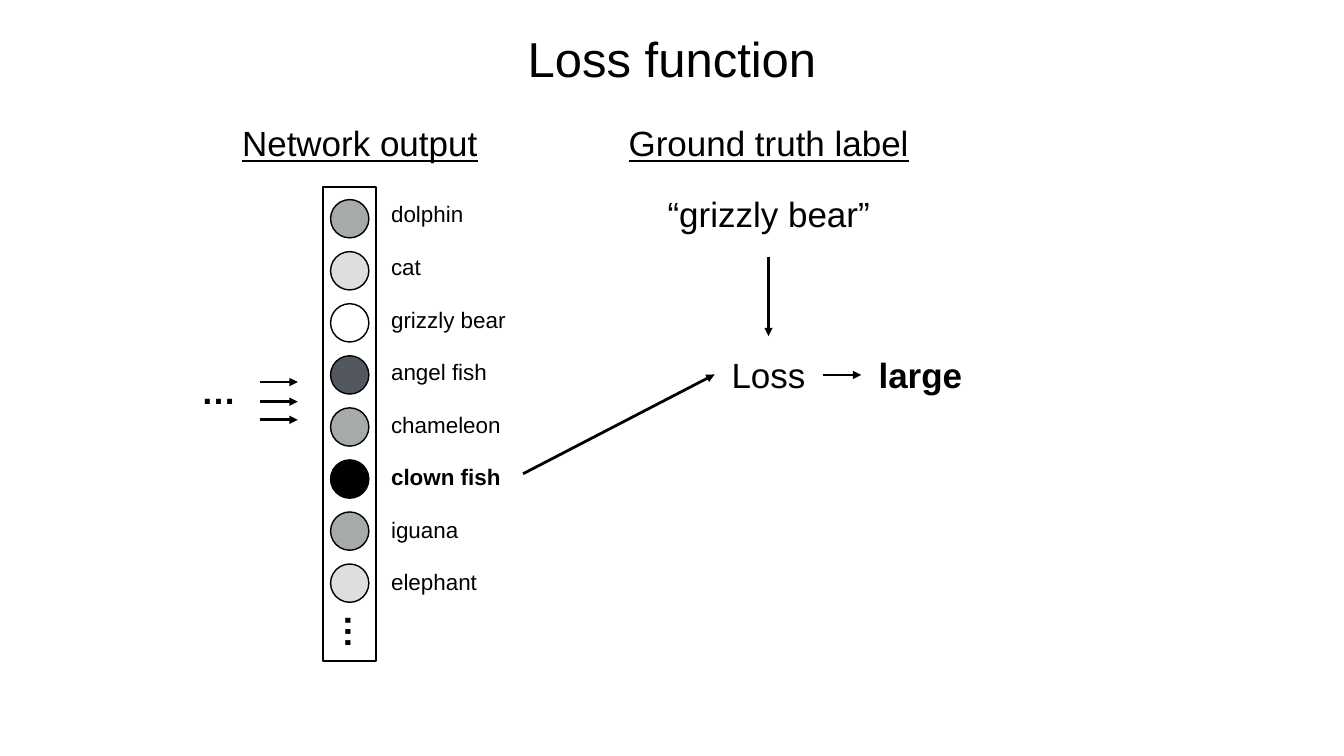
"""Build the "Loss function" slide: network output compared with a ground truth label."""
import pptx
import pptx.dml.color
import pptx.enum.shapes
import pptx.enum.text
import pptx.oxml
import pptx.oxml.ns
import pptx.util

BLACK = pptx.dml.color.RGBColor(0x00, 0x00, 0x00)
SLATE = pptx.dml.color.RGBColor(0x53, 0x58, 0x5F)
GRAY = pptx.dml.color.RGBColor(0xA6, 0xAA, 0xA9)
PALE = pptx.dml.color.RGBColor(0xDC, 0xDE, 0xE0)
WHITE = pptx.dml.color.RGBColor(0xFF, 0xFF, 0xFF)

COLUMNS, ROWS = 26.67, 15
CELL = pptx.util.Inches(1)

CLASSES = [
    ("dolphin", GRAY, {}),
    ("cat", PALE, {}),
    ("grizzly bear", WHITE, {}),
    ("angel fish", SLATE, {}),
    ("chameleon", GRAY, {}),
    ("clown fish", BLACK, {"bold": True}),
    ("iguana", GRAY, {}),
    ("elephant", PALE, {}),
]
HEADINGS = [
    ("Loss function", (10.36, 0.48, 5.95, 1.32), {"size": pptx.util.Pt(70)}, 0),
    ("Network output", (4.7, 2.34, 4.88, 0.99), {"underline": True}, 0),
    ("Ground truth label", (12.36, 2.34, 5.79, 0.99), {"underline": True}, 0),
    ("“grizzly bear”", (12.75, 3.17, 5.01, 2.15), {}, 0),
    ("Loss", (14.43, 6.94, 1.64, 0.99), {}, 0),
    ("large", (17.35, 6.94, 1.83, 0.99), {"bold": True}, 0),
    ("…", (3.91, 7.26, 0.86, 0.99), {"bold": True}, 0),
    ("…", (6.7, 12.04, 0.86, 0.99), {"bold": True}, 90),
]
LAYER_BOX = (6.41, 3.71, 1.06, 9.41)
NEURON_LEFT, NEURON_TOP, NEURON_SIZE, NEURON_PITCH = 6.56, 3.96, 0.76, 1.033
LABEL_BOX, LABEL_PITCH = (7.68, 3.6, 3.22, 1.29), 1.043
INPUT_ROWS = [7.58, 7.97, 8.33]
ARROWS = [
    (10.38, 9.4, 14.18, 7.43),
    (15.25, 5.1, 15.25, 6.67),
    (16.33, 7.44, 17.09, 7.44),
] + [(5.15, row, 5.91, row) for row in INPUT_ROWS]


def on_grid(cells):
    return [round(cell * CELL) for cell in cells]


def apply(target, values):
    for name, value in values.items():
        setattr(target, name, value)


def add_words(slide, words, cells, style, align, wrap=False, rotation=0):
    box = slide.shapes.add_textbox(*on_grid(cells))
    box.rotation = rotation
    inset = round(0.08 * CELL)
    apply(box.text_frame, {
        "word_wrap": wrap,
        "vertical_anchor": pptx.enum.text.MSO_ANCHOR.MIDDLE,
        "margin_left": inset, "margin_right": inset,
        "margin_top": inset, "margin_bottom": inset,
    })
    paragraph = box.text_frame.paragraphs[0]
    paragraph.alignment = align
    run = paragraph.add_run()
    run.text = words
    run.font.color.rgb = BLACK
    apply(run.font, {"name": "Arial", "size": pptx.util.Pt(50), **style})


def add_outlined(slide, preset, cells, weight, fill=None):
    shape = slide.shapes.add_shape(preset, *on_grid(cells))
    shape.shadow.inherit = False
    if fill is None:
        shape.fill.background()
    else:
        shape.fill.solid()
        shape.fill.fore_color.rgb = fill
    shape.line.color.rgb = BLACK
    shape.line.width = pptx.util.Pt(weight)


def add_arrow(slide, cells):
    arrow = slide.shapes.add_connector(
        pptx.enum.shapes.MSO_CONNECTOR.STRAIGHT, *on_grid(cells))
    arrow.line.color.rgb = BLACK
    arrow.line.width = pptx.util.Pt(4)
    head = pptx.oxml.parse_xml(
        f'<a:tailEnd {pptx.oxml.ns.nsdecls("a")} type="triangle"/>')
    arrow.line._get_or_add_ln().append(head)
    arrow._element.spPr.append(
        pptx.oxml.parse_xml(f'<a:effectLst {pptx.oxml.ns.nsdecls("a")}/>'))


def main():
    deck = pptx.Presentation()
    deck.slide_width, deck.slide_height = on_grid((COLUMNS, ROWS))
    slide = deck.slides.add_slide(deck.slide_layouts[6])
    presets = pptx.enum.shapes.MSO_SHAPE
    aligns = pptx.enum.text.PP_ALIGN

    add_outlined(slide, presets.RECTANGLE, LAYER_BOX, 3)
    left, top, width, height = LABEL_BOX
    for index, (label, activation, style) in enumerate(CLASSES):
        neuron = (NEURON_LEFT, NEURON_TOP + index * NEURON_PITCH, NEURON_SIZE, NEURON_SIZE)
        add_outlined(slide, presets.OVAL, neuron, 2, activation)
        add_words(slide, label, (left, top + index * LABEL_PITCH, width, height),
                  {"size": pptx.util.Pt(32), **style}, aligns.LEFT, wrap=True)
    for words, cells, style, rotation in HEADINGS:
        add_words(slide, words, cells, style, aligns.CENTER, rotation=rotation)
    for cells in ARROWS:
        add_arrow(slide, cells)

    deck.save("out.pptx")


if __name__ == "__main__":
    main()
